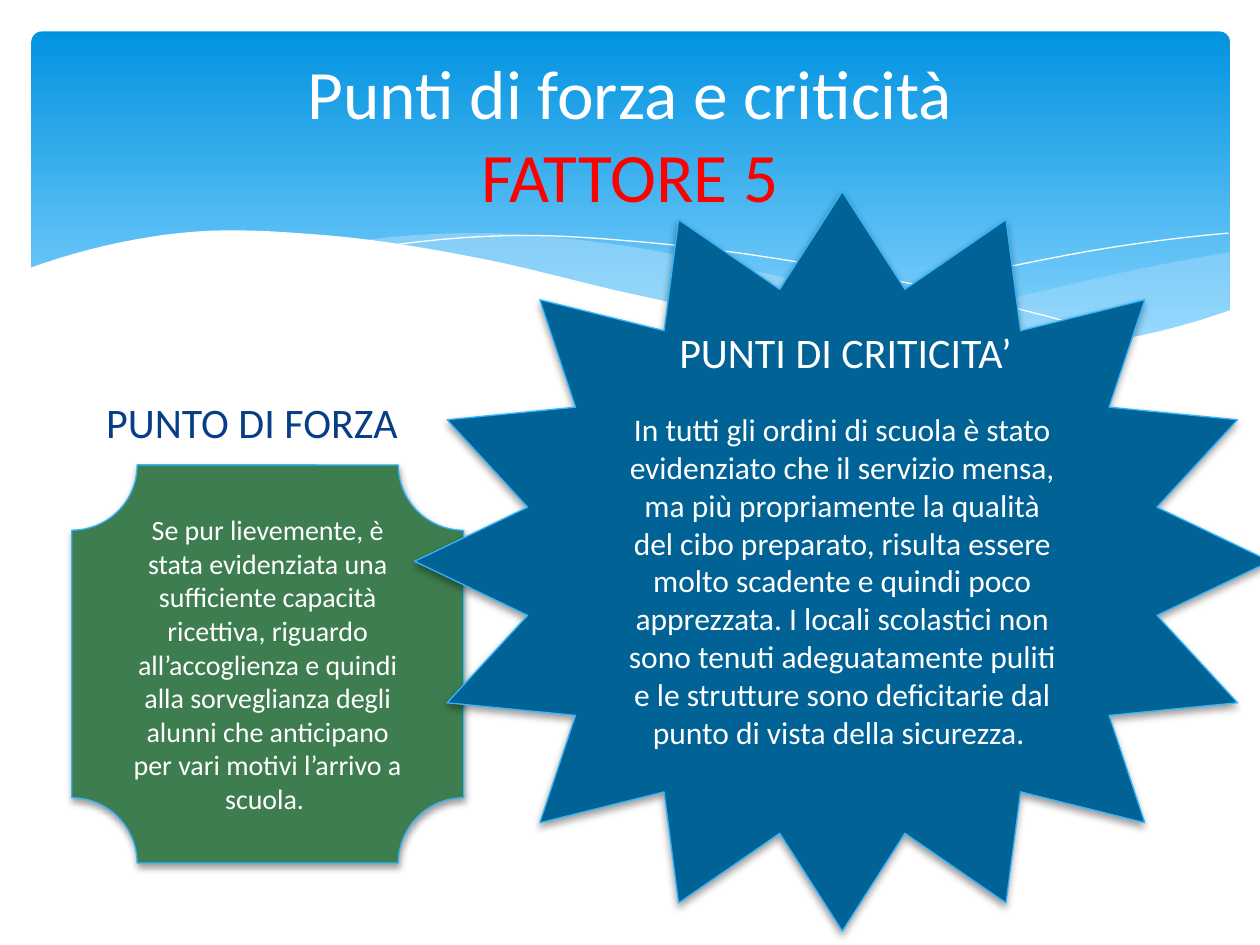
"""Build the slide on strengths and weak points of factor 5."""
from lxml.etree import SubElement
from pptx import Presentation
from pptx.dml.color import RGBColor as RGB
from pptx.enum.shapes import MSO_SHAPE as Shape
from pptx.enum.text import MSO_ANCHOR as Anchor, PP_ALIGN as Align
from pptx.oxml.ns import qn
from pptx.util import Inches, Pt

COLORS = {
    "top": "0293E0", "low": "83D3FE", "wave": "C6E7FC", "white": "FFFFFF",
    "red": "FF0000", "navy": "073E87", "green": "3E7D50", "blue": "016296",
    "edge": "31B6FD", "black": "000000",
}
FONT = "Calibri"
TITLE, HEAD = 39.6, 24
STEPS = 10
FLOOR = 3.29

FORCE = (
    "Se pur lievemente, è stata evidenziata una sufficiente capacità "
    "ricettiva, riguardo all’accoglienza e quindi alla sorveglianza "
    "degli alunni che anticipano per vari motivi l’arrivo a scuola. ")
ISSUES = (
    "In tutti gli ordini di scuola è stato evidenziato che il servizio "
    "mensa, ma più propriamente la qualità del cibo preparato, risulta "
    "essere molto scadente e quindi poco apprezzata. I locali scolastici "
    "non sono tenuti adeguatamente puliti e le strutture sono deficitarie "
    "dal punto di vista della sicurezza. ")


def tint(name):
    return RGB.from_string(COLORS[name])


def paint(shape, fill, alpha=None):
    shape.fill.solid()
    shape.fill.fore_color.rgb = tint(fill)
    if alpha:
        color = shape.fill._xPr.find(qn("a:solidFill"))[0]
        SubElement(color, qn("a:alpha"), val=str(alpha * 1000))


def band(slide):
    shape = slide.shapes.add_shape(
        Shape.ROUNDED_RECTANGLE, *map(Inches, (0.25, 0.25, 9.51, 2.7)))
    shape.adjustments[0] = 0.03
    shape.shadow.inherit = False
    shape.line.fill.background()
    shape.fill.gradient()
    shape.fill.gradient_angle = 270
    stops = ((0, "top"), (0.9, "low"))
    for stop, (pos, name) in zip(shape.fill.gradient_stops, stops):
        stop.position = pos
        stop.color.rgb = tint(name)


def curve(left, right, *tops):
    """Return points of a smooth curve through heights at equal gaps."""
    gap = (right - left) / (len(tops) - 1)
    inner = [(b - a) / 2 for a, b in zip(tops, tops[2:])]
    first = 2 * (tops[1] - tops[0]) - inner[0]
    last = 2 * (tops[-1] - tops[-2]) - inner[-1]
    rise = [first, *inner, last]
    points = [(left, tops[0])]
    for i in range(len(tops) - 1):
        for step in range(1, STEPS + 1):
            t = step / STEPS
            u = 1 - t
            y = (u * u * ((1 + 2 * t) * tops[i] + t * rise[i])
                 + t * t * ((1 + 2 * u) * tops[i + 1] - u * rise[i + 1]))
            points.append((left + (i + t) * gap, y))
    return points


def trace(slide, points, close):
    spots = [(Inches(x), Inches(y)) for x, y in points]
    form = slide.shapes.build_freeform(*spots[0])
    form.add_line_segments(spots[1:], close=close)
    shape = form.convert_to_shape()
    shape.shadow.inherit = False
    return shape


def wave(slide, upper, lower, fill, alpha=None):
    shape = trace(slide, upper + lower[::-1], True)
    paint(shape, fill, alpha)
    shape.line.fill.background()


def thread(slide, points):
    shape = trace(slide, points, False)
    shape.fill.background()
    shape.line.color.rgb = tint("white")
    shape.line.width = Pt(0)


def waves(slide):
    """Draw two clear waves, two thin threads and the white front wave."""
    side, mid, front = (6.61, 9.76), (2.86, 8.93), (0.23, 9.77)
    wave(slide, curve(*side, 2.65, 2.51, 2.33, 2.15, 2),
         curve(*side, 2.65, 2.75, 2.78, 2.7, 2.47), "wave", 29)
    wave(slide, curve(*mid, 1.91, 1.85, 1.94, 2.13, 2.36, 2.57, 2.73),
         curve(*mid, 1.91, 2.08, 2.31, 2.53, 2.69, 2.78, 2.73), "wave", 40)
    thread(slide, curve(3.09, 9.07, 1.95, 1.87, 1.92, 2.04, 2.22, 2.45, 2.72))
    thread(slide, curve(6.13, 9.75, 2.57, 2.33, 2.13, 1.96, 1.85))
    crest = curve(*front, 2.13, 1.85, 1.87, 2.05, 2.33, 2.57, 2.73, 2.74, 2.46)
    wave(slide, crest, [(x, FLOOR) for x in front], "white")


def write(shape, runs, size, **style):
    frame = shape.text_frame
    look = {"word_wrap": True, "vertical_anchor": Anchor.MIDDLE, **style}
    for key, value in look.items():
        setattr(frame, key, value)
    para = frame.paragraphs[0]
    para.alignment = Align.CENTER
    for i, (text, color) in enumerate(runs):
        if i:
            para.add_line_break()
        run = para.add_run()
        run.text = text
        for key, value in {"name": FONT, "size": Pt(size)}.items():
            setattr(run.font, key, value)
        run.font.color.rgb = tint(color)


def label(slide, box, size, *runs):
    write(slide.shapes.add_textbox(*map(Inches, box)), runs, size)


def shade(shape):
    effects = shape._element.spPr.find(qn("a:effectLst"))
    outer = SubElement(
        effects, qn("a:outerShdw"), blurRad=str(Pt(4)), dist=str(Pt(2)),
        dir="5400000", rotWithShape="0")
    color = SubElement(outer, qn("a:srgbClr"), val=COLORS["black"])
    SubElement(color, qn("a:alpha"), val="38000")


def badge(slide, kind, box, fill, text, size, **style):
    shape = slide.shapes.add_shape(kind, *map(Inches, box))
    paint(shape, fill)
    shape.line.color.rgb = tint("edge")
    shape.line.width = Pt(0.75)
    shape.shadow.inherit = False
    shade(shape)
    write(shape, [(text, "white")], size, **style)


def main():
    deck = Presentation()
    deck.slide_width, deck.slide_height = Inches(10), Inches(7.5)
    slide = deck.slides.add_slide(deck.slide_layouts[6])
    band(slide)
    waves(slide)
    label(slide, (0.5, 0.37, 9, 1.37), TITLE,
          ("Punti di forza e criticità", "white"), ("FATTORE 5", "red"))
    label(slide, (-0.09, 3, 4.18, 0.7), HEAD, ("PUNTO DI FORZA", "navy"))
    badge(slide, Shape.PLAQUE, (0.57, 3.69, 3.11, 3.16), "green", FORCE, 16)
    badge(slide, Shape.STAR_16_POINT, (3.29, 1.52, 6.79, 5.87), "blue",
          ISSUES, 18, margin_top=Inches(0.35))
    label(slide, (4.62, 2.44, 4.18, 0.7), HEAD, ("PUNTI DI CRITICITA’", "white"))
    deck.save("out.pptx")


if __name__ == "__main__":
    main()
